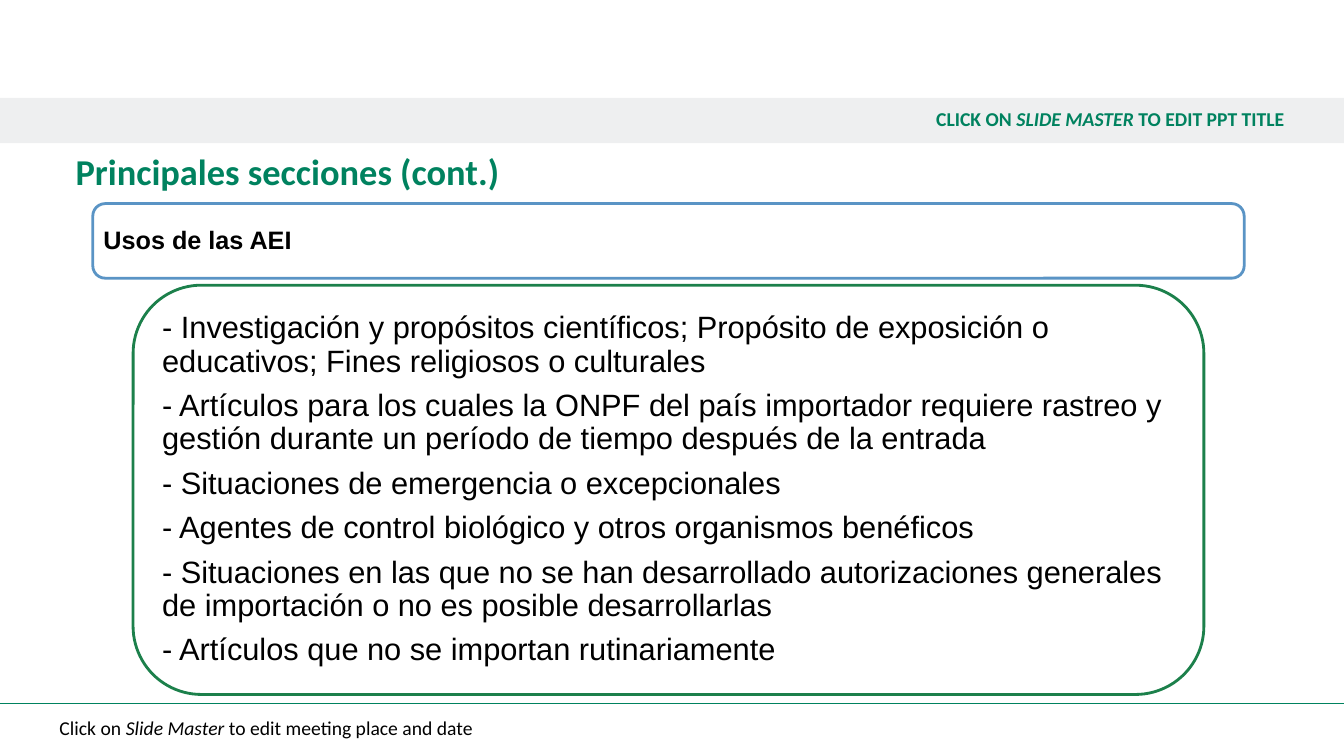
from dataclasses import dataclass

import pptx
import pptx.dml.color
import pptx.enum.shapes
import pptx.enum.text
import pptx.oxml
import pptx.oxml.ns
import pptx.util

Inches = pptx.util.Inches
Pt = pptx.util.Pt
Shape = pptx.enum.shapes.MSO_SHAPE
Anchor = pptx.enum.text.MSO_ANCHOR
Align = pptx.enum.text.PP_ALIGN


@dataclass(frozen=True)
class Theme:
    green: str = "00825F"
    band: str = "D8D9DC"
    blue: str = "5A94C5"
    leaf: str = "1C804B"
    white: str = "FFFFFF"
    black: str = "000000"
    head: str = "Calibri"
    body: str = "Arial"
    small: int = 14
    label: int = 18
    text: int = 22
    title: int = 26


THEME = Theme()
WIDTH, HEIGHT = 13.33, 7.5

USES = [
    "- Investigación y propósitos científicos; Propósito de exposición o educativos; "
    "Fines religiosos o culturales",
    "- Artículos para los cuales la ONPF del país importador requiere rastreo y gestión "
    "durante un período de tiempo después de la entrada",
    "- Situaciones de emergencia o excepcionales",
    "- Agentes de control biológico y otros organismos benéficos",
    "- Situaciones en las que no se han desarrollado autorizaciones generales de "
    "importación o no es posible desarrollarlas",
    "- Artículos que no se importan rutinariamente",
]


def rgb(code):
    return pptx.dml.color.RGBColor.from_string(code)


def write(shape, paras, *, font, size, color=THEME.black, bold=False,
          align=Align.LEFT, anchor=Anchor.MIDDLE, inset=(0.1, 0.05), after=0):
    """Fill a shape with paragraphs; each is a list of runs, every second one italic."""
    frame = shape.text_frame
    frame.word_wrap = True
    frame.vertical_anchor = anchor
    frame.margin_left = frame.margin_right = Inches(inset[0])
    frame.margin_top = frame.margin_bottom = Inches(inset[1])
    for i, runs in enumerate(paras):
        para = frame.add_paragraph() if i else frame.paragraphs[0]
        para.alignment = align
        para.line_spacing = 0.9
        para.space_after = Pt(after)
        for j, text in enumerate(runs):
            run = para.add_run()
            run.text = text
            run.font.name = font
            run.font.size = Pt(size)
            run.font.bold = bold
            run.font.italic = j % 2 == 1
            run.font.color.rgb = rgb(color)


def panel(slide, kind, box, fill, line=None):
    shape = slide.shapes.add_shape(kind, *map(Inches, box))
    shape.shadow.inherit = False
    shape.fill.solid()
    shape.fill.fore_color.rgb = rgb(fill)
    if line:
        shape.line.color.rgb = rgb(line)
        shape.line.width = Pt(2)
    else:
        shape.line.fill.background()
    return shape


def label(slide, box, paras, **style):
    write(slide.shapes.add_textbox(*map(Inches, box)), paras, **style)


def banner(slide, box):
    band = panel(slide, Shape.RECTANGLE, box, THEME.band)
    tint = band.fill._xPr.find(".//" + pptx.oxml.ns.qn("a:srgbClr"))
    tint.append(pptx.oxml.parse_xml(
        f'<a:alpha {pptx.oxml.ns.nsdecls("a")} val="42000"/>'))
    write(band, [["CLICK ON ", "SLIDE MASTER ", "TO EDIT PPT TITLE"]],
          font=THEME.head, size=THEME.small, color=THEME.green, bold=True,
          align=Align.RIGHT, inset=(0.59, 0.05))


def footer(slide, box):
    left, top, width, height = box
    rule = slide.shapes.add_connector(
        pptx.enum.shapes.MSO_CONNECTOR.STRAIGHT,
        Inches(left), Inches(top), Inches(left + width), Inches(top))
    rule.line.color.rgb = rgb(THEME.green)
    rule.line.width = Pt(1)
    rule._element.spPr.append(pptx.oxml.parse_xml(
        f'<a:effectLst {pptx.oxml.ns.nsdecls("a")}/>'))
    label(slide, (left, top + 0.08, width, height - 0.08),
          [["Click on ", "Slide Master ", "to edit meeting place and date"]],
          font=THEME.head, size=THEME.small, inset=(0.59, 0.05))


def topic(slide, box, name, items):
    """Place a heading card with an indented card of items below it."""
    left, top, width, height = box
    tall, gap, indent = 0.74, 0.07, 0.4
    head = panel(slide, Shape.ROUNDED_RECTANGLE, (left, top, width, tall),
                 THEME.white, THEME.blue)
    write(head, [[name]], font=THEME.body, size=THEME.label, bold=True,
          inset=(0.07, 0.07))
    drop = tall + gap
    card = panel(slide, Shape.ROUNDED_RECTANGLE,
                 (left + indent, top + drop, width - 2 * indent, height - drop),
                 THEME.white, THEME.leaf)
    write(card, [[item] for item in items], font=THEME.body, size=THEME.text,
          inset=(0.09, 0.09), after=8)


def main():
    deck = pptx.Presentation()
    deck.slide_width, deck.slide_height = Inches(WIDTH), Inches(HEIGHT)
    slide = deck.slides.add_slide(deck.slide_layouts[6])
    footer(slide, (0, 6.98, WIDTH, 0.43))
    banner(slide, (0, 0.97, WIDTH, 0.45))
    topic(slide, (0.92, 2.02, 11.42, 4.87), "Usos de las AEI", USES)
    label(slide, (0.58, 1.45, 11.5, 0.42), [["Principales secciones (cont.)"]],
          font=THEME.head, size=THEME.title, color=THEME.green, bold=True,
          anchor=Anchor.TOP, inset=(0.17, 0.08))
    deck.save("out.pptx")


if __name__ == "__main__":
    main()
